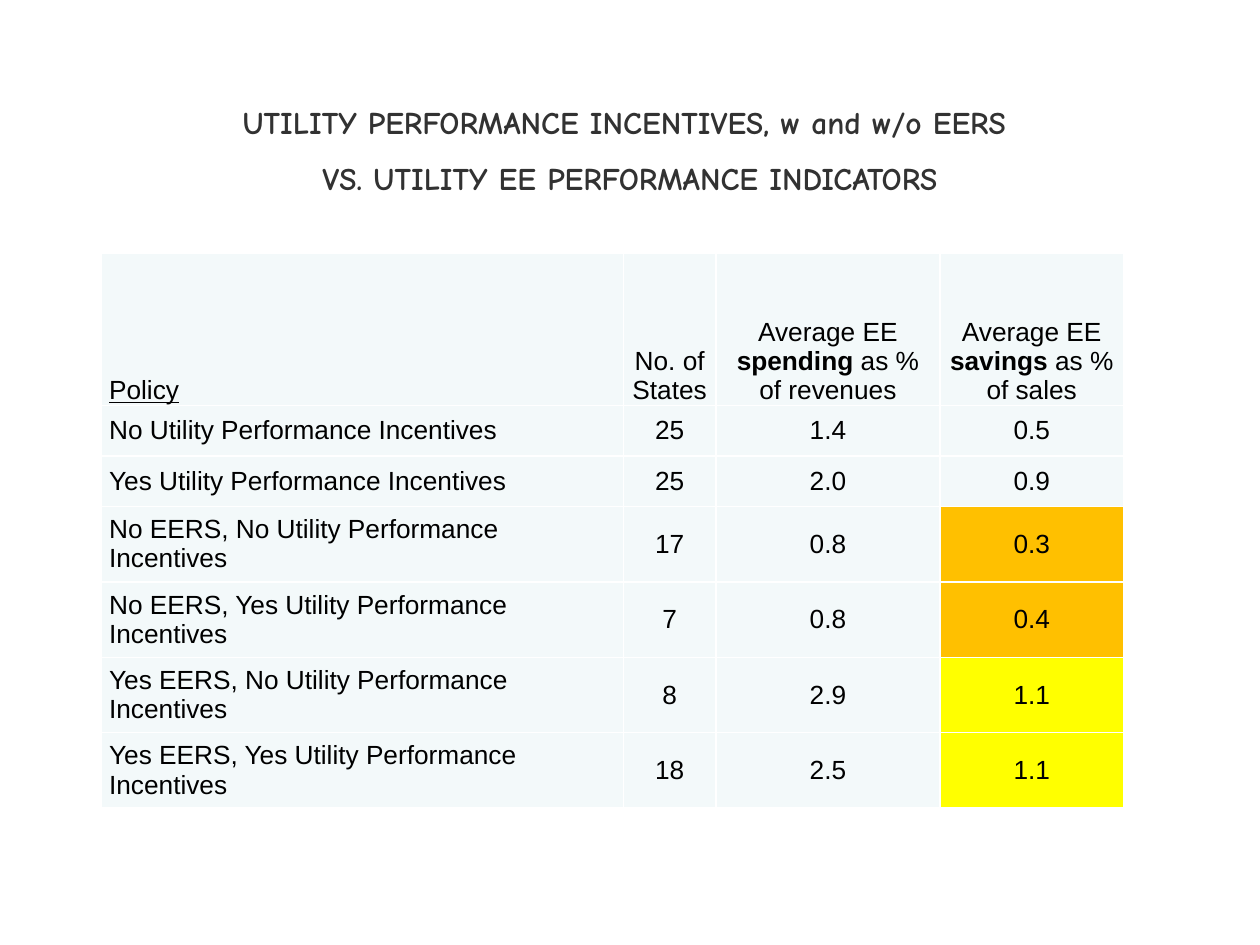
from lxml import etree
from pptx import Presentation
from pptx import util as u
from pptx.dml import color
from pptx.enum import text
from pptx.oxml import ns

COLORS = {"title": "323232", "text": "000000", "cell": "F3F9FA", "border": "FFFFFF",
          "low": "FFC000", "high": "FFFF00"}
TITLE_LINES = ["UTILITY PERFORMANCE INCENTIVES, w and w/o EERS ",
               "VS. UTILITY EE PERFORMANCE INDICATORS"]
HEADERS = [
    [("Policy", {"underline": True})],
    [("No. of States", {})],
    [("Average EE ", {}), ("spending ", {"bold": True}), ("as % of revenues", {})],
    [("Average EE ", {}), ("savings", {"bold": True}), (" as % of sales", {})],
]
POLICIES = [
    ("No Utility Performance Incentives", "25", "1.4", "0.5", "cell"),
    ("Yes Utility Performance Incentives", "25", "2.0", "0.9", "cell"),
    ("No EERS, No Utility Performance Incentives", "17", "0.8", "0.3", "low"),
    ("No EERS, Yes Utility Performance Incentives", "7", "0.8", "0.4", "low"),
    ("Yes EERS, No Utility Performance Incentives", "8", "2.9", "1.1", "high"),
    ("Yes EERS, Yes Utility Performance Incentives", "18", "2.5", "1.1", "high"),
]
COLUMN_WIDTHS = [10.52, 1.86, 4.52, 3.7]
ROW_HEIGHTS = [3.07] + [1.02] * 2 + [1.52] * 4


def add_run(paragraph, words, font_name, size, color_name, bold=False, underline=False):
    """Append one formatted run to a paragraph."""
    run = paragraph.add_run()
    run.text = words
    font = run.font
    font.name, font.size = font_name, u.Pt(size)
    font.bold, font.underline = bold, underline
    font.color.rgb = color.RGBColor.from_string(COLORS[color_name])


def add_title(slide, left, top, width, height):
    """Place the two centred title lines in the given box."""
    frame = slide.shapes.add_textbox(left, top, width, height).text_frame
    frame.word_wrap = True
    frame.vertical_anchor = text.MSO_ANCHOR.MIDDLE
    for index, line in enumerate(TITLE_LINES):
        paragraph = frame.paragraphs[0] if index == 0 else frame.add_paragraph()
        paragraph.alignment = text.PP_ALIGN.CENTER
        if index:
            paragraph.space_before = u.Pt(10.8)
        add_run(paragraph, line, "Comic Neue", 18, "title", bold=True)


def add_borders(cell):
    """Draw a thin line on each side of a cell."""
    properties = cell._tc.get_or_add_tcPr()
    for side in ("lnL", "lnR", "lnT", "lnB"):
        line = etree.SubElement(properties, ns.qn(f"a:{side}"), w=str(u.Pt(1)))
        fill = etree.SubElement(line, ns.qn("a:solidFill"))
        etree.SubElement(fill, ns.qn("a:srgbClr"), val=COLORS["border"])


def fill_cell(cell, runs, color_name, alignment, anchor):
    """Set the borders, fill and text of one cell."""
    add_borders(cell)
    cell.fill.solid()
    cell.fill.fore_color.rgb = color.RGBColor.from_string(COLORS[color_name])
    cell.margin_left = cell.margin_right = u.Cm(0.15)
    cell.margin_top = cell.margin_bottom = 0
    cell.vertical_anchor = anchor
    paragraph = cell.text_frame.paragraphs[0]
    paragraph.alignment = alignment
    for words, style in runs:
        add_run(paragraph, words, "Arial", 15, "text", **style)


def add_policy_table(slide, left, top):
    """Place the policy table with its top left corner at the given point."""
    table = slide.shapes.add_table(
        len(ROW_HEIGHTS), len(COLUMN_WIDTHS), left, top,
        u.Cm(sum(COLUMN_WIDTHS)), u.Cm(sum(ROW_HEIGHTS))).table
    table.first_row = table.horz_banding = False
    for column, width in zip(table.columns, COLUMN_WIDTHS):
        column.width = u.Cm(width)
    for row, height in zip(table.rows, ROW_HEIGHTS):
        row.height = u.Cm(height)
    alignments = [text.PP_ALIGN.LEFT] + [text.PP_ALIGN.CENTER] * 3
    for column, runs in enumerate(HEADERS):
        fill_cell(table.cell(0, column), runs, "cell", alignments[column],
                  text.MSO_ANCHOR.BOTTOM)
    for row, (*values, savings_color) in enumerate(POLICIES, start=1):
        for column, value in enumerate(values):
            color_name = savings_color if column == 3 else "cell"
            fill_cell(table.cell(row, column), [(value, {})], color_name,
                      alignments[column], text.MSO_ANCHOR.MIDDLE)


def main():
    """Build and save the slide."""
    presentation = Presentation()
    presentation.slide_width, presentation.slide_height = u.Cm(25.4), u.Cm(19.05)
    slide = presentation.slides.add_slide(presentation.slide_layouts[6])
    add_title(slide, u.Cm(1.75), u.Cm(1.75), u.Cm(21.9), u.Cm(2.54))
    add_policy_table(slide, u.Cm(2.05), u.Cm(5.1))
    presentation.save("out.pptx")


if __name__ == "__main__":
    main()
